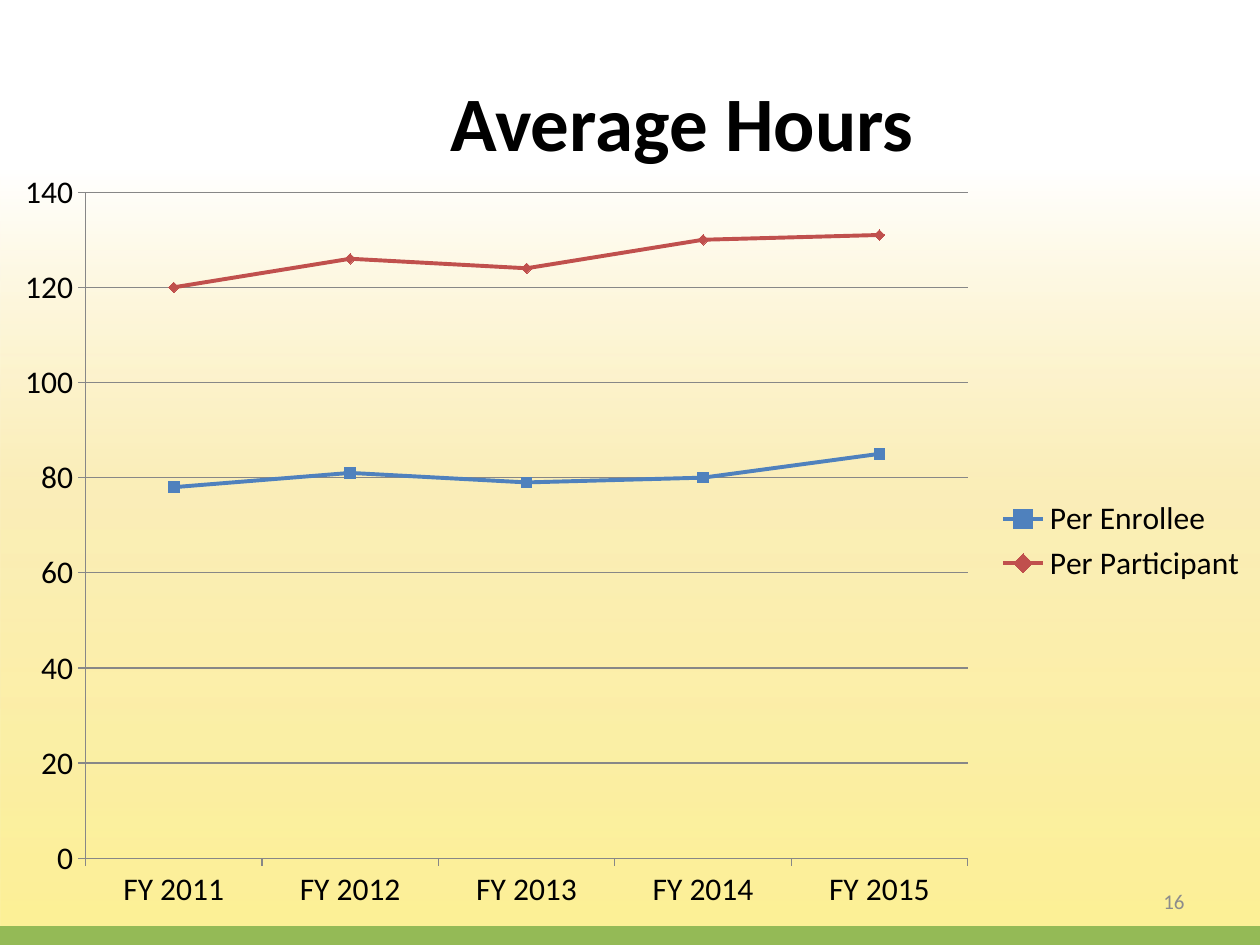
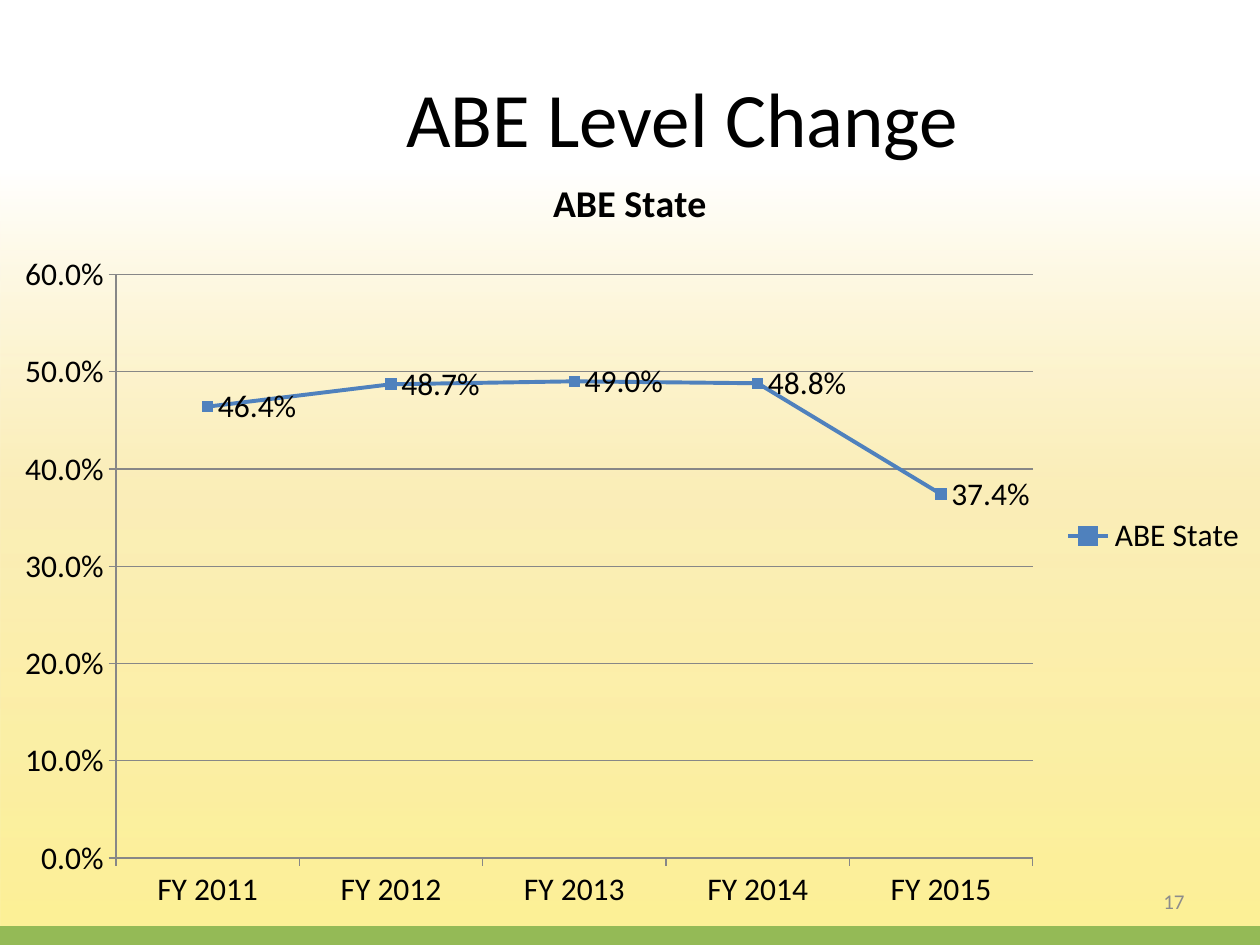
from dataclasses import dataclass

from lxml import etree
from pptx import Presentation
from pptx.chart.data import CategoryChartData
from pptx.dml.color import RGBColor
from pptx.enum.chart import XL_CHART_TYPE as ChartType
from pptx.enum.chart import XL_LABEL_POSITION as LabelPosition
from pptx.enum.chart import XL_LEGEND_POSITION as LegendPosition
from pptx.enum.chart import XL_MARKER_STYLE as Marker
from pptx.enum.chart import XL_TICK_MARK as TickMark
from pptx.enum.shapes import MSO_SHAPE as Preset
from pptx.enum.text import MSO_ANCHOR as Anchor
from pptx.enum.text import PP_ALIGN as Align
from pptx.oxml.ns import qn
from pptx.util import Inches, Pt


@dataclass(frozen=True)
class Theme:
    """Colours, font, type sizes and line widths of the deck."""
    font: str = "Calibri"
    text: str = "000000"
    muted: str = "8C8C8C"
    grid: str = "878787"
    band: str = "94BA56"
    series: tuple = ("4F81BD", "C0504D")
    markers: tuple = (Marker.SQUARE, Marker.DIAMOND)
    glow: tuple = ((0, "FCEF8E", 94), (49, "FAEAA8", 80), (82, "FFFFFF", 100))
    title_size: float = 44
    chart_title_size: float = 21.6
    chart_size: float = 18
    number_size: float = 12
    line_width: float = 2.25
    grid_width: float = 0.75
    marker_size: int = 6


THEME = Theme()
WIDTH, HEIGHT = Inches(10), Inches(7.5)
YEARS = [f"FY {year}" for year in range(2011, 2016)]


def frame(left, top, width, height):
    """Turn shares of the slide into lengths."""
    return (round(left * WIDTH), round(top * HEIGHT),
            round(width * WIDTH), round(height * HEIGHT))


def style_font(font, size, color=THEME.text, bold=False):
    """Format a font from the theme."""
    font.name, font.size, font.bold = THEME.font, Pt(size), bold
    font.color.rgb = RGBColor.from_string(color)


def style_line(line, color, width):
    """Set the colour and width of a line."""
    line.color.rgb = RGBColor.from_string(color)
    line.width = Pt(width)


def write(text_frame, text, size, align, **style):
    """Write one run, aligned and centred vertically."""
    text_frame.word_wrap = True
    text_frame.vertical_anchor = Anchor.MIDDLE
    paragraph = text_frame.paragraphs[0]
    paragraph.alignment = align
    run = paragraph.add_run()
    run.text = text
    style_font(run.font, size, **style)


def add_rectangle(slide, box):
    """Add a plain rectangle without line or shadow."""
    shape = slide.shapes.add_shape(Preset.RECTANGLE, *frame(*box))
    shape.shadow.inherit = False
    shape.line.fill.background()
    return shape


def fill_glow(shape):
    """Fill a shape with the theme gradient, rising from the bottom."""
    shape.fill.gradient()
    shape.fill.gradient_angle = 90
    stops = shape.element.spPr.find(".//" + qn("a:gsLst"))
    for stop in list(stops):
        stops.remove(stop)
    for position, color, opacity in THEME.glow:
        stop = etree.SubElement(stops, qn("a:gs"), pos=str(position * 1000))
        fill = etree.SubElement(stop, qn("a:srgbClr"), val=color)
        etree.SubElement(fill, qn("a:alpha"), val=str(opacity * 1000))


def dress_layout(layout, slide):
    """Build the backdrop and bottom band and move them behind the layout."""
    backdrop = add_rectangle(slide, (0, 0, 1, 1))
    fill_glow(backdrop)
    band = add_rectangle(slide, (0, 0.98, 1, 0.02))
    band.fill.solid()
    band.fill.fore_color.rgb = RGBColor.from_string(THEME.band)
    for index, shape in enumerate((backdrop, band), start=2):
        layout.shapes.element.insert(index, shape.element)


def set_title(slide, text, top, bold=False):
    """Place and write the slide title."""
    title = slide.shapes.title
    title.left, title.top, title.width, title.height = frame(0.133, top, 0.817, 0.167)
    write(title.text_frame, text, THEME.title_size, Align.CENTER, bold=bold)


def add_number(slide, number):
    """Add the slide number at the bottom right."""
    box = slide.shapes.add_textbox(*frame(0.717, 0.927, 0.233, 0.053))
    write(box.text_frame, str(number), THEME.number_size, Align.RIGHT, color=THEME.muted)


def style_axes(chart, maximum, step, number_format):
    """Format both axes and the value gridlines."""
    values = chart.value_axis
    values.minimum_scale, values.maximum_scale, values.major_unit = 0, maximum, step
    values.has_major_gridlines = True
    style_line(values.major_gridlines.format.line, THEME.grid, THEME.grid_width)
    values.tick_labels.number_format = number_format
    values.tick_labels.number_format_is_linked = False
    for axis in (values, chart.category_axis):
        axis.major_tick_mark = TickMark.OUTSIDE
        axis.minor_tick_mark = TickMark.NONE
        style_line(axis.format.line, THEME.grid, THEME.grid_width)


def style_series(series, color, marker):
    """Give a series a straight line and matching markers."""
    series.smooth = False
    style_line(series.format.line, color, THEME.line_width)
    series.marker.style, series.marker.size = marker, THEME.marker_size
    series.marker.format.fill.solid()
    series.marker.format.fill.fore_color.rgb = RGBColor.from_string(color)
    style_line(series.marker.format.line, color, THEME.grid_width)


def add_labels(series, number_format):
    """Show the values to the right of the points."""
    labels = series.data_labels
    labels.show_value = True
    labels.position = LabelPosition.RIGHT
    labels.number_format, labels.number_format_is_linked = number_format, False
    style_font(labels.font, THEME.chart_size)


def add_line_chart(slide, top, height, series, maximum, step, number_format="General"):
    """Add a line chart over the years, with a legend on the right."""
    data = CategoryChartData(number_format=number_format)
    data.categories = YEARS
    for name, values in series.items():
        data.add_series(name, values)
    chart = slide.shapes.add_chart(
        ChartType.LINE_MARKERS, *frame(0, top, 1, height), data).chart
    style_font(chart.font, THEME.chart_size)
    chart.has_title = False
    chart.has_legend = True
    chart.legend.position = LegendPosition.RIGHT
    chart.legend.include_in_layout = False
    chart.plots[0].vary_by_categories = False
    style_axes(chart, maximum, step, number_format)
    for line, color, marker in zip(chart.plots[0].series, THEME.series, THEME.markers):
        style_series(line, color, marker)
    return chart


def set_chart_title(chart, text):
    """Write a bold title above the chart."""
    chart.has_title = True
    chart.chart_title.include_in_layout = False
    run = chart.chart_title.text_frame.paragraphs[0].add_run()
    run.text = text
    style_font(run.font, THEME.chart_title_size, bold=True)


def build_hours(slide):
    """Fill the slide on average hours."""
    set_title(slide, "Average Hours", 0.044, bold=True)
    add_number(slide, 16)
    add_line_chart(slide, 0.167, 0.811, {
        "Per Enrollee": (78, 81, 79, 80, 85),
        "Per Participant": (120, 126, 124, 130, 131),
    }, maximum=140, step=20)


def build_level_change(slide):
    """Fill the slide on level change."""
    percent = "0.0%"
    name = "ABE State"
    set_title(slide, "ABE Level Change", 0.04)
    add_number(slide, 17)
    chart = add_line_chart(slide, 0.156, 0.822, {
        name: (0.464, 0.487, 0.49, 0.488, 0.374),
    }, maximum=0.6, step=0.1, number_format=percent)
    set_chart_title(chart, name)
    add_labels(chart.plots[0].series[0], percent)


def main():
    """Build and save the deck."""
    presentation = Presentation()
    presentation.slide_width, presentation.slide_height = WIDTH, HEIGHT
    layout = presentation.slide_layouts.get_by_name("Title Only")
    slides = [presentation.slides.add_slide(layout) for _ in range(2)]
    dress_layout(layout, slides[0])
    for build, slide in zip((build_hours, build_level_change), slides):
        build(slide)
    presentation.save("out.pptx")


if __name__ == "__main__":
    main()
